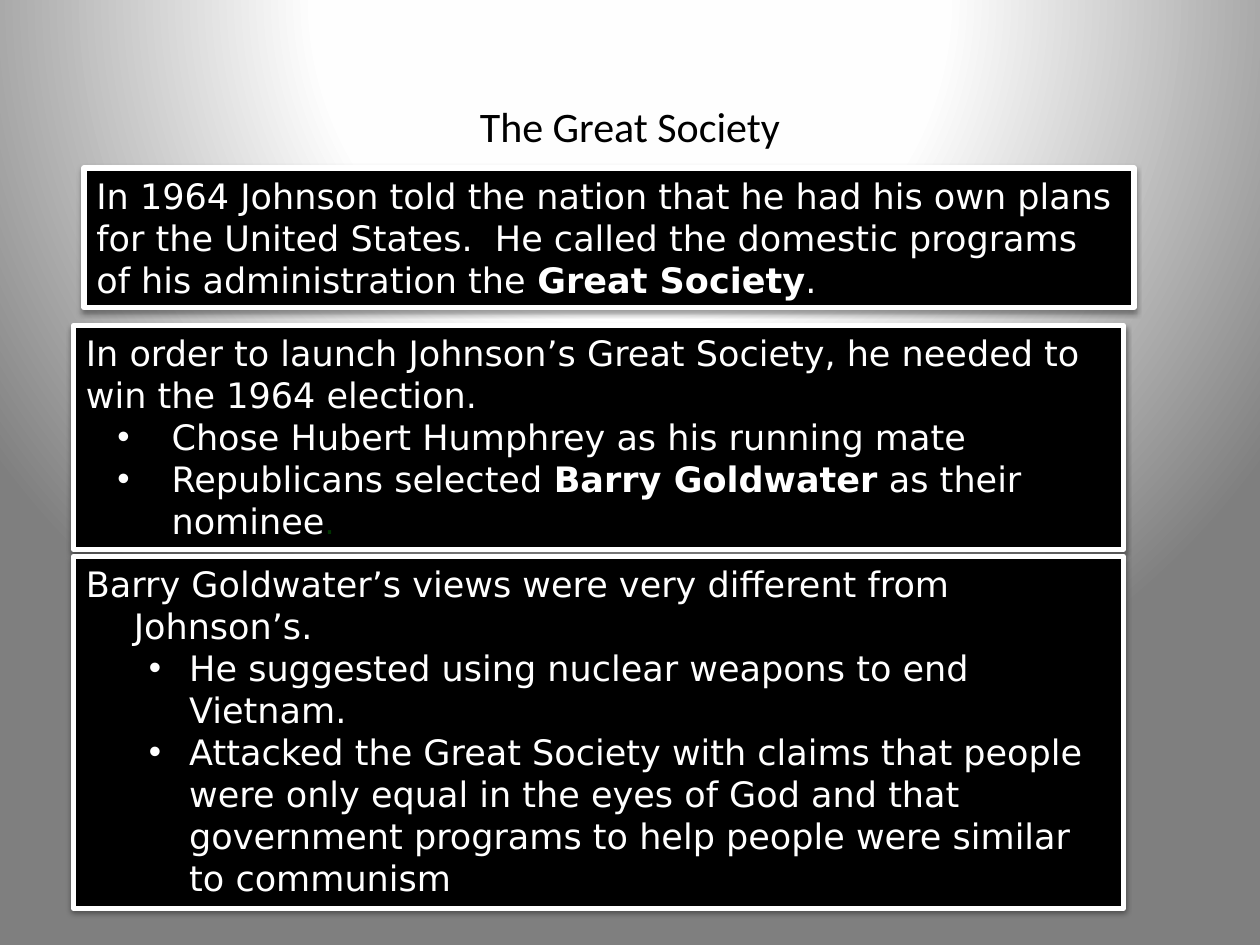
from pptx import Presentation
from pptx.dml.color import RGBColor
from pptx.enum.text import MSO_ANCHOR, MSO_AUTO_SIZE, PP_ALIGN
from pptx.oxml import parse_xml
from pptx.oxml.ns import nsdecls
from pptx.util import Inches, Pt

BLACK = RGBColor(0x00, 0x00, 0x00)
WHITE = RGBColor(0xFF, 0xFF, 0xFF)
GREEN = RGBColor(0x00, 0x33, 0x00)
STOPS = (
    (0, RGBColor(0xFF, 0xFF, 0xFF)),
    (40, RGBColor(0xFE, 0xFE, 0xFE)),
    (100, RGBColor(0x7F, 0x7F, 0x7F)),
)
HEAD = "Calibri"
BODY = "DejaVu Sans"
CELL = Inches(1) // 12  # the slide is a grid of 120 columns and 90 rows


def grid(*cells):
    return [round(n * CELL) for n in cells]


def paint_back(slide):
    """Give the slide a round gradient that spreads from above its top edge."""
    stops = "".join(
        f'<a:gs pos="{pos * 1000}"><a:srgbClr val="{color}"/></a:gs>'
        for pos, color in STOPS
    )
    back = parse_xml(
        f'<p:bg {nsdecls("p", "a")}><p:bgPr><a:gradFill rotWithShape="1">'
        f'<a:gsLst>{stops}</a:gsLst><a:path path="circle">'
        '<a:fillToRect l="50000" t="-80000" r="50000" b="180000"/></a:path>'
        '</a:gradFill><a:effectLst/></p:bgPr></p:bg>'
    )
    slide.element.cSld.insert(0, back)


def add_run(para, text, font=BODY, size=20, color=WHITE, bold=False):
    run = para.add_run()
    run.text = text
    run.font.name = font
    run.font.size = Pt(size)
    run.font.bold = bold
    run.font.color.rgb = color


def set_title(slide, text):
    title = slide.shapes.title
    title.left, title.top, title.width, title.height = grid(7, 4, 106, 16)
    frame = title.text_frame
    frame.vertical_anchor = MSO_ANCHOR.MIDDLE
    para = frame.paragraphs[0]
    para.alignment = PP_ALIGN.CENTER
    add_run(para, text, HEAD, 24, BLACK)


def add_box(slide, left, top, height):
    """Add a black panel with a white frame and return its text frame."""
    box = slide.shapes.add_textbox(*grid(left, top, 100, height))
    box.fill.solid()
    box.fill.fore_color.rgb = BLACK
    box.line.color.rgb = WHITE
    box.line.width = Pt(3)
    props = box.element.spPr
    props.find("{*}ln").append(parse_xml(f'<a:round {nsdecls("a")}/>'))
    props.append(parse_xml(
        f'<a:effectLst {nsdecls("a")}><a:outerShdw blurRad="{Pt(3.1)}" '
        f'dist="{Pt(1.6)}" dir="5400000" rotWithShape="0">'
        f'<a:srgbClr val="{BLACK}"><a:alpha val="38000"/></a:srgbClr>'
        '</a:outerShdw></a:effectLst>'
    ))
    frame = box.text_frame
    frame.word_wrap = True
    frame.auto_size = MSO_AUTO_SIZE.SHAPE_TO_FIT_TEXT
    return frame


def set_indent(para, margin, hang):
    props = para._p.get_or_add_pPr()
    props.set("marL", str(Inches(margin)))
    props.set("indent", str(-Inches(hang)))
    return props


def add_bullet(frame, margin, hang):
    para = frame.add_paragraph()
    para.level = 1
    props = set_indent(para, margin, hang)
    props.append(parse_xml(f'<a:buFont {nsdecls("a")} typeface="Arial"/>'))
    props.append(parse_xml(f'<a:buChar {nsdecls("a")} char="•"/>'))
    return para


def add_plans(slide):
    para = add_box(slide, 8, 16, 13.3).paragraphs[0]
    add_run(para, "In 1964 Johnson told the nation that he had his own plans "
            "for the United States.  He called the domestic programs of his "
            "administration the ")
    add_run(para, "Great Society", bold=True)
    add_run(para, ".")


def add_race(slide):
    frame = add_box(slide, 7, 31, 21.3)
    add_run(frame.paragraphs[0], "In order to launch Johnson’s Great Society, "
            "he needed to win the 1964 election.")
    mate = add_bullet(frame, 0.68, 0.43)
    add_run(mate, "Chose Hubert Humphrey as his running mate")
    rival = add_bullet(frame, 0.68, 0.43)
    add_run(rival, "Republicans selected ")
    add_run(rival, "Barry Goldwater", bold=True)
    add_run(rival, " as their nominee")
    add_run(rival, ".", size=18, color=GREEN)


def add_views(slide):
    frame = add_box(slide, 7, 53, 33.5)
    lead = frame.paragraphs[0]
    set_indent(lead, 0.38, 0.38)
    add_run(lead, "Barry Goldwater’s views were very different from Johnson’s.")
    for text in (
        "He suggested using nuclear weapons to end Vietnam.",
        "Attacked the Great Society with claims that people were only equal "
        "in the eyes of God and that government programs to help people were "
        "similar to communism",
    ):
        add_run(add_bullet(frame, 0.82, 0.32), text)


def main():
    deck = Presentation()
    deck.slide_width, deck.slide_height = grid(120, 90)
    slide = deck.slides.add_slide(deck.slide_layouts.get_by_name("Title Only"))
    paint_back(slide)
    set_title(slide, "The Great Society")
    add_plans(slide)
    add_race(slide)
    add_views(slide)
    deck.save("out.pptx")


if __name__ == "__main__":
    main()
